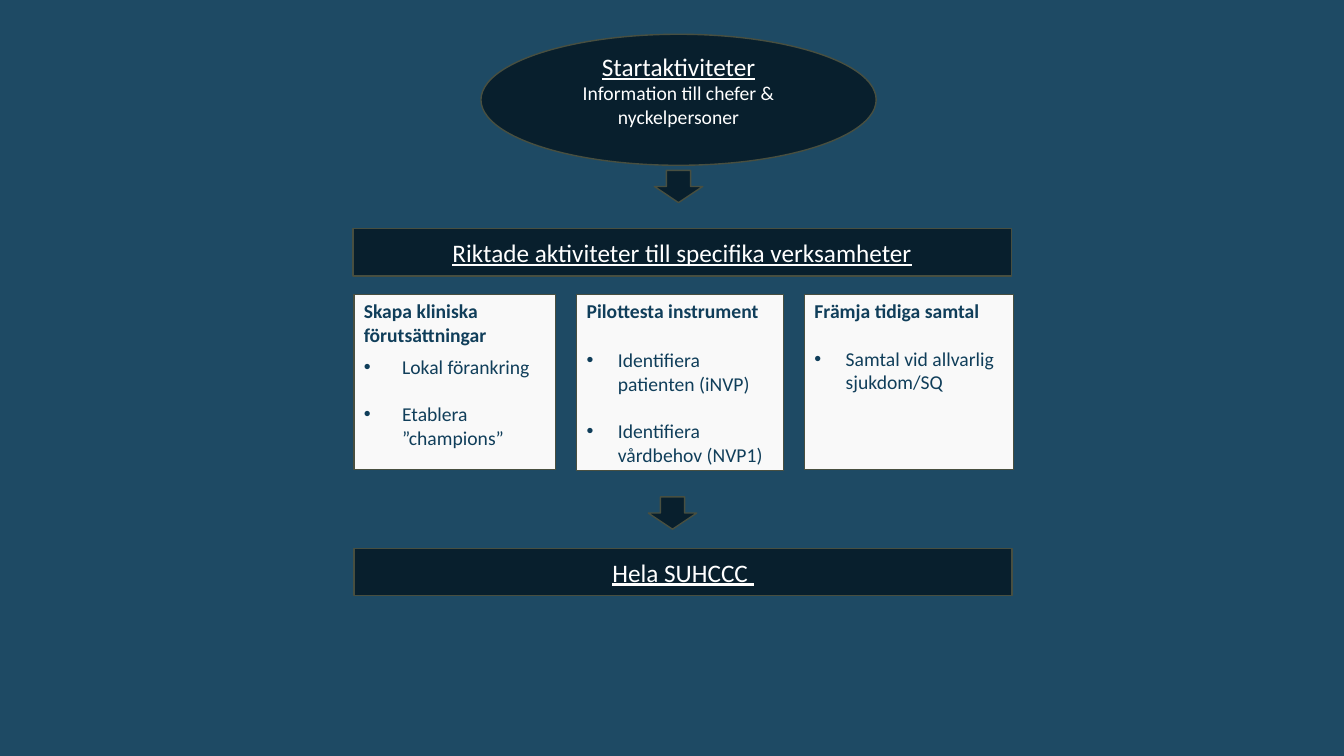
from dataclasses import dataclass

from lxml import etree
from pptx import Presentation
from pptx.dml.color import RGBColor
from pptx.enum import shapes, text
from pptx.oxml.ns import qn
from pptx.util import Inches, Pt


@dataclass(frozen=True)
class Theme:
    font: str = "Calibri"
    background: str = "1E4A64"
    dark: str = "081F2D"
    light: str = "F9F9F9"
    outline: str = "484F40"
    on_dark: str = "FFFFFF"
    on_light: str = "103E5A"
    heading_size: int = 18
    body_size: int = 14


class FlowSlide:
    def __init__(self, presentation, theme):
        self.theme = theme
        self.slide = presentation.slides.add_slide(presentation.slide_layouts[6])
        fill = self.slide.background.fill
        fill.solid()
        fill.fore_color.rgb = RGBColor.from_string(theme.background)

    def block(self, kind, left, top, width, height, color):
        shape = self.slide.shapes.add_shape(
            kind, Inches(left), Inches(top), Inches(width), Inches(height))
        shape.shadow.inherit = False
        shape.fill.solid()
        shape.fill.fore_color.rgb = RGBColor.from_string(color)
        shape.line.color.rgb = RGBColor.from_string(self.theme.outline)
        shape.line.width = Pt(1)
        shape.text_frame.word_wrap = True
        return shape

    def style(self, paragraph, size, color, alignment, bold=False, underline=False):
        paragraph.alignment = alignment
        for run in paragraph.runs:
            font = run.font
            font.name = self.theme.font
            font.size = Pt(size)
            font.bold = bold
            font.underline = underline
            font.color.rgb = RGBColor.from_string(color)

    def bullet(self, paragraph, indent):
        properties = paragraph._p.get_or_add_pPr()
        properties.set("marL", str(Inches(indent)))
        properties.set("indent", str(-Inches(indent)))
        etree.SubElement(properties, qn("a:buFont")).set("typeface", "Arial")
        etree.SubElement(properties, qn("a:buChar")).set("char", "•")

    def arrow(self, left, top):
        self.block(shapes.MSO_SHAPE.DOWN_ARROW, left, top, 0.48, 0.32, self.theme.dark)

    def stage(self, kind, left, top, width, height, heading, detail=None):
        """Dark step with an underlined heading and an optional plain line below."""
        theme = self.theme
        shape = self.block(kind, left, top, width, height, theme.dark)
        frame = shape.text_frame
        frame.vertical_anchor = text.MSO_ANCHOR.MIDDLE
        frame.text = heading
        self.style(frame.paragraphs[0], theme.heading_size, theme.on_dark,
                   text.PP_ALIGN.CENTER, underline=True)
        if detail:
            frame.margin_bottom = Inches(0.25)
            paragraph = frame.add_paragraph()
            paragraph.text = detail
            self.style(paragraph, theme.body_size, theme.on_dark, text.PP_ALIGN.CENTER)

    def card(self, left, top, width, height, heading, items, indent, first_gap):
        """Light box with a bold heading; first_gap is the space in points below it."""
        theme = self.theme
        shape = self.block(shapes.MSO_SHAPE.RECTANGLE, left, top, width, height, theme.light)
        frame = shape.text_frame
        frame.vertical_anchor = text.MSO_ANCHOR.TOP
        frame.text = heading
        self.style(frame.paragraphs[0], theme.body_size, theme.on_light,
                   text.PP_ALIGN.LEFT, bold=True)
        for number, item in enumerate(items):
            paragraph = frame.add_paragraph()
            paragraph.text = item
            paragraph.space_before = Pt(17 if number else first_gap)
            self.bullet(paragraph, indent)
            self.style(paragraph, theme.body_size, theme.on_light, text.PP_ALIGN.LEFT)


def main():
    presentation = Presentation()
    presentation.slide_width = Inches(13.33)
    presentation.slide_height = Inches(7.5)
    flow = FlowSlide(presentation, Theme())

    flow.stage(shapes.MSO_SHAPE.OVAL, 4.77, 0.34, 3.92, 1.3,
               "Startaktiviteter", "Information till chefer & nyckelpersoner")
    flow.arrow(6.49, 1.69)
    flow.stage(shapes.MSO_SHAPE.RECTANGLE, 3.5, 2.27, 6.53, 0.47,
               "Riktade aktiviteter till specifika verksamheter")

    cards = [
        (3.51, 2, 1.74, "Skapa kliniska förutsättningar",
         ["Lokal förankring", "Etablera ”champions”"], 0.38, 6),
        (5.72, 2.05, 1.75, "Pilottesta instrument",
         ["Identifiera patienten (iNVP)", "Identifiera vårdbehov (NVP1)"], 0.31, 18),
        (7.98, 2.07, 1.74, "Främja tidiga samtal",
         ["Samtal vid allvarlig sjukdom/SQ"], 0.31, 17),
    ]
    for left, width, height, heading, items, indent, first_gap in cards:
        flow.card(left, 2.92, width, height, heading, items, indent, first_gap)

    flow.arrow(6.43, 4.93)
    flow.stage(shapes.MSO_SHAPE.RECTANGLE, 3.51, 5.44, 6.53, 0.47, "Hela SUHCCC ")
    presentation.save("out.pptx")


if __name__ == "__main__":
    main()
